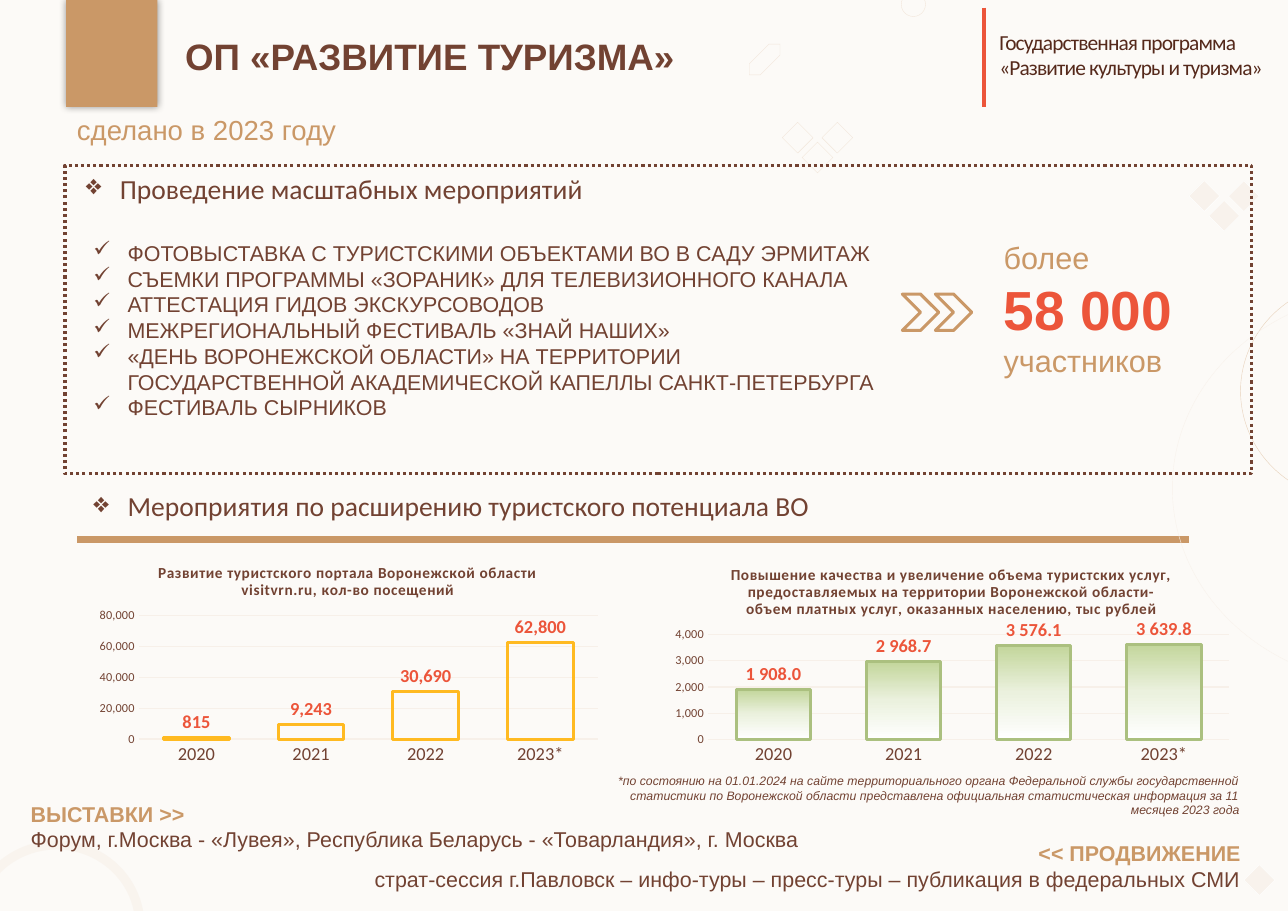
"""Build the tourism programme slide with two charts."""
from pptx import Presentation
from pptx.chart.data import CategoryChartData
from pptx.dml.color import RGBColor
from pptx.enum.chart import XL_CHART_TYPE, XL_LABEL_POSITION, XL_TICK_MARK
from pptx.enum.dml import MSO_LINE
from pptx.enum.shapes import MSO_CONNECTOR, MSO_SHAPE
from pptx.enum.text import MSO_AUTO_SIZE, PP_ALIGN
from pptx.oxml import parse_xml
from pptx.oxml.ns import nsdecls, qn
from pptx.util import Pt
from lxml.etree import SubElement

PX = 9144
HUES = {"page": "FCFAF7", "tan": "CA9867", "brown": "724232", "dark": "55291B",
        "red": "EC553A", "pale": "F8F2EC", "faint": "F2E6DA", "ring": "F5ECE3",
        "white": "FFFFFF", "grid": "F7F0E9", "gold": "FFBA21", "green": "ABC07F",
        "leaf": "C3D69B", "mint": "EBF1DE"}

EVENTS = [
    "ФОТОВЫСТАВКА С ТУРИСТСКИМИ ОБЪЕКТАМИ ВО В САДУ ЭРМИТАЖ",
    "СЪЕМКИ ПРОГРАММЫ «ЗОРАНИК» ДЛЯ ТЕЛЕВИЗИОННОГО КАНАЛА",
    "АТТЕСТАЦИЯ ГИДОВ ЭКСКУРСОВОДОВ",
    "МЕЖРЕГИОНАЛЬНЫЙ ФЕСТИВАЛЬ «ЗНАЙ НАШИХ»",
    "«ДЕНЬ ВОРОНЕЖСКОЙ ОБЛАСТИ» НА ТЕРРИТОРИИ "
    "ГОСУДАРСТВЕННОЙ АКАДЕМИЧЕСКОЙ КАПЕЛЛЫ САНКТ-ПЕТЕРБУРГА",
    "ФЕСТИВАЛЬ СЫРНИКОВ"]
NOTE = ("*по состоянию на 01.01.2024 на сайте территориального органа Федеральной службы "
        "государственной статистики по Воронежской области представлена официальная "
        "статистическая информация за 11 месяцев 2023 года")
FAIRS = "Форум, г.Москва - «Лувея», Республика Беларусь - «Товарландия», г. Москва"
PROMO = "страт-сессия г.Павловск – инфо-туры – пресс-туры – публикация в федеральных СМИ"

TEXTS = [
    {"at": (168, 30, 780, 42), "rows": [("ОП «РАЗВИТИЕ ТУРИЗМА»", 24, "brown", "b")],
     "flat": True},
    {"at": (907, 25, 254, 49), "flat": True, "face": "Calibri", "gap": -60,
     "rows": [("Государственная программа «Развитие культуры и туризма»", 14, "dark", "")]},
    {"at": (60, 98, 308, 40), "rows": [("сделано в 2023 году", 18, "tan", "")]},
    {"at": (68, 151, 555, 40), "face": "Calibri", "mark": "❖",
     "rows": [("Проведение масштабных мероприятий", 18, "brown", "")]},
    {"at": (75, 213, 743, 175), "mark": "✓",
     "rows": [(event, 14, "brown", "") for event in EVENTS]},
    {"at": (901, 212, 192, 138), "glow": True,
     "rows": [("более", 20, "tan", ""), ("58 000", 36, "red", "b"),
              ("участников", 20, "tan", "")]},
    {"at": (75, 439, 808, 40), "face": "Calibri", "mark": "❖",
     "rows": [("Мероприятия по расширению туристского потенциала ВО", 18, "brown", "")]},
    {"at": (18, 722, 963, 57),
     "rows": [("ВЫСТАВКИ >>", 14, "tan", "b"), (FAIRS, 14, "brown", "")]},
    {"at": (551, 697, 584, 50), "right": True, "rows": [(NOTE, 8, "brown", "i")]},
    {"at": (173, 758, 963, 57), "right": True,
     "rows": [("<< ПРОДВИЖЕНИЕ", 14, "tan", "b"), (PROMO, 14, "brown", "")]}]

RULES = [((893, 7, 893, 97), "red", 2.25), ((70, 490, 1079, 490), "tan", 4.5)]

OVAL, GEM = MSO_SHAPE.OVAL, MSO_SHAPE.DIAMOND
DECOR = [
    (OVAL, (1126, 256, 204, 198), None, "tan", 0.25, 42),
    (OVAL, (1064, 264, 401, 358), None, "pale", 0.25, 100),
    (OVAL, (-24, 767, 151, 147), None, "ring", 6, 42),
    (OVAL, (818, -7, 22, 22), None, "faint", 0.25, 100),
    (GEM, (1129, 785, 28, 28), "pale", "white", 0.25, 100)]
TRIOS = [((1079, 164), "pale", "white"), ((710, 111), None, "faint")]
BADGE = [(708, 40), (698, 40), (680, 58), (680, 68), (690, 68), (708, 50)]

YEARS = ["2020", "2021", "2022", "2023*"]
CHARTS = [
    {"at": (79, 499, 473, 200), "plot": (0.1, 0.3, 0.88, 0.56),
     "title": "Развитие туристского портала Воронежской области visitvrn.ru, "
              "кол-во посещений",
     "vals": [815, 9243, 30690, 62800], "top": 80000, "step": 20000,
     "form": "#,##0", "edge": "gold", "fade": None},
    {"at": (601, 501, 525, 198), "plot": (0.08, 0.38, 0.9, 0.48),
     "title": "Повышение качества и увеличение объема туристских услуг, "
              "предоставляемых на территории Воронежской области- "
              "объем платных услуг, оказанных населению, тыс рублей",
     "vals": [1908, 2968.7, 3576.1, 3639.8], "top": 4000, "step": 1000,
     "form": "#\\ ##0.0", "edge": "green", "fade": ("leaf", "mint", "white")}]


def tint(name):
    return RGBColor.from_string(HUES[name])


def scale(nums):
    return [n * PX for n in nums]


def cast(node):
    node.append(parse_xml(
        f'<a:outerShdw {nsdecls("a")} blurRad="63500" dist="0" algn="ctr">'
        '<a:srgbClr val="000000"><a:alpha val="40000"/></a:srgbClr></a:outerShdw>'))


def paint(shape, fill, line=None, width=1, alpha=100):
    shape.shadow.inherit = False
    if fill:
        shape.fill.solid()
        shape.fill.fore_color.rgb = tint(fill)
    else:
        shape.fill.background()
    if not line:
        shape.line.fill.background()
        return shape
    shape.line.color.rgb = tint(line)
    shape.line.width = Pt(width)
    if alpha < 100:
        tone = shape.line._ln.find(".//" + qn("a:srgbClr"))
        SubElement(tone, qn("a:alpha")).set("val", str(alpha * 1000))
    return shape


def draw(slide, kind, at, *look):
    return paint(slide.shapes.add_shape(kind, *scale(at)), *look)


def write(slide, at, rows, face="Arial", mark=None, right=False, flat=False,
          gap=0, glow=False):
    frame = slide.shapes.add_textbox(*scale(at)).text_frame
    frame.word_wrap = True
    frame.auto_size = MSO_AUTO_SIZE.SHAPE_TO_FIT_TEXT
    if flat:
        frame.margin_left = frame.margin_right = frame.margin_bottom = 0
        frame.margin_top = PX
    frame.text = "\n".join(row[0] for row in rows)
    for para, (_, size, hue, style) in zip(frame.paragraphs, rows):
        if right:
            para.alignment = PP_ALIGN.RIGHT
        if mark:
            props = para._p.get_or_add_pPr()
            props.set("marL", str(31 * PX))
            props.set("indent", str(-31 * PX))
            SubElement(props, qn("a:buChar")).set("char", mark)
        run = para.runs[0]
        font = run.font
        font.name, font.size = face, Pt(size)
        font.bold, font.italic = style == "b", style == "i"
        font.color.rgb = tint(hue)
        props = run._r.get_or_add_rPr()
        if gap:
            props.set("spc", str(gap))
        if glow:
            node = parse_xml(f'<a:effectLst {nsdecls("a")}/>')
            cast(node)
            props.find(qn("a:solidFill")).addnext(node)


def style(font, size, hue, bold=False):
    font.name, font.size, font.bold = "Calibri", Pt(size), bold
    font.color.rgb = tint(hue)


def plot(slide, at, plot, title, vals, top, step, form, edge, fade):
    data = CategoryChartData()
    data.categories = YEARS
    data.add_series("Series 1", vals)
    chart = slide.shapes.add_chart(
        XL_CHART_TYPE.COLUMN_CLUSTERED, *scale(at), data).chart
    style(chart.font, 10, "brown")
    chart.has_legend = False
    head = chart.chart_title.text_frame
    head.text = title
    run = head.paragraphs[0].runs[0]
    style(run.font, 10, "brown", True)
    run._r.get_or_add_rPr().set("spc", "50")

    for axis, size in ((chart.category_axis, 12), (chart.value_axis, 8)):
        style(axis.tick_labels.font, size, "brown")
        axis.major_tick_mark = axis.minor_tick_mark = XL_TICK_MARK.NONE
        axis.format.line.fill.background()
    axis.minimum_scale, axis.maximum_scale, axis.major_unit = 0, top, step
    axis.tick_labels.number_format = "#,##0"
    axis.tick_labels.number_format_is_linked = False
    axis.major_gridlines.format.line.color.rgb = tint("grid")
    axis.major_gridlines.format.line.width = Pt(0.75)

    bars = chart.plots[0]
    bars.gap_width, bars.overlap, bars.vary_by_categories = 75, -25, False
    bars.has_data_labels = True
    tags = bars.data_labels
    tags.show_value, tags.position = True, XL_LABEL_POSITION.OUTSIDE_END
    tags.number_format, tags.number_format_is_linked = form, False
    style(tags.font, 12, "red", True)
    look = bars.series[0].format
    look.line.color.rgb = tint(edge)
    look.line.width = Pt(2)
    if fade:
        look.fill.gradient()
        look.fill.gradient_angle = 270
        stops = look.fill.gradient_stops
        for stop, hue, pos in zip(stops, fade[::2], (0, 1)):
            stop.color.rgb, stop.position = tint(hue), pos
        stops[0]._gs.addnext(parse_xml(
            f'<a:gs {nsdecls("a")} pos="50000"><a:srgbClr val="{HUES[fade[1]]}"/></a:gs>'))
    else:
        look.fill.background()

    area = chart._chartSpace.find(".//" + qn("c:plotArea"))
    for old in area.findall(qn("c:layout")):
        area.remove(old)
    rows = [("layoutTarget", "inner"), ("xMode", "edge"), ("yMode", "edge"),
            *zip("xywh", plot)]
    body = "".join(f'<c:{key} val="{val}"/>' for key, val in rows)
    area.insert(0, parse_xml(f'<c:layout {nsdecls("c")}><c:manualLayout>{body}'
                             '</c:manualLayout></c:layout>'))


def main():
    deck = Presentation()
    deck.slide_width, deck.slide_height = scale((1169, 827))
    slide = deck.slides.add_slide(deck.slide_layouts[6])
    back = slide.background.fill
    back.solid()
    back.fore_color.rgb = tint("page")

    block = draw(slide, MSO_SHAPE.RECTANGLE, (60, 0, 83, 97), "tan")
    cast(block._element.spPr.find(qn("a:effectLst")))
    for ends, hue, width in RULES:
        rule = slide.shapes.add_connector(MSO_CONNECTOR.STRAIGHT, *scale(ends))
        rule.line.color.rgb, rule.line.width = tint(hue), Pt(width)
        SubElement(rule._element.spPr, qn("a:effectLst"))
    for item in DECOR:
        draw(slide, *item)
    for (left, top), fill, line in TRIOS:
        for i in range(3):
            draw(slide, GEM, (left + 18 * i, top + 18 * (i % 2), 28, 28), fill, line, 0.25)
    form = slide.shapes.build_freeform(*BADGE[0], scale=PX)
    form.add_line_segments(BADGE[1:], close=True)
    paint(form.convert_to_shape(), None, "faint", 0.25)

    for item in CHARTS:
        plot(slide, **item)
    frame = draw(slide, MSO_SHAPE.RECTANGLE, (59, 150, 1077, 280), None, "brown", 2)
    frame.line.dash_style = MSO_LINE.ROUND_DOT
    for left in (819, 849):
        draw(slide, MSO_SHAPE.CHEVRON, (left, 267, 33, 33), None, "tan", 2)
    for item in TEXTS:
        write(slide, **item)
    deck.save("out.pptx")


if __name__ == "__main__":
    main()
